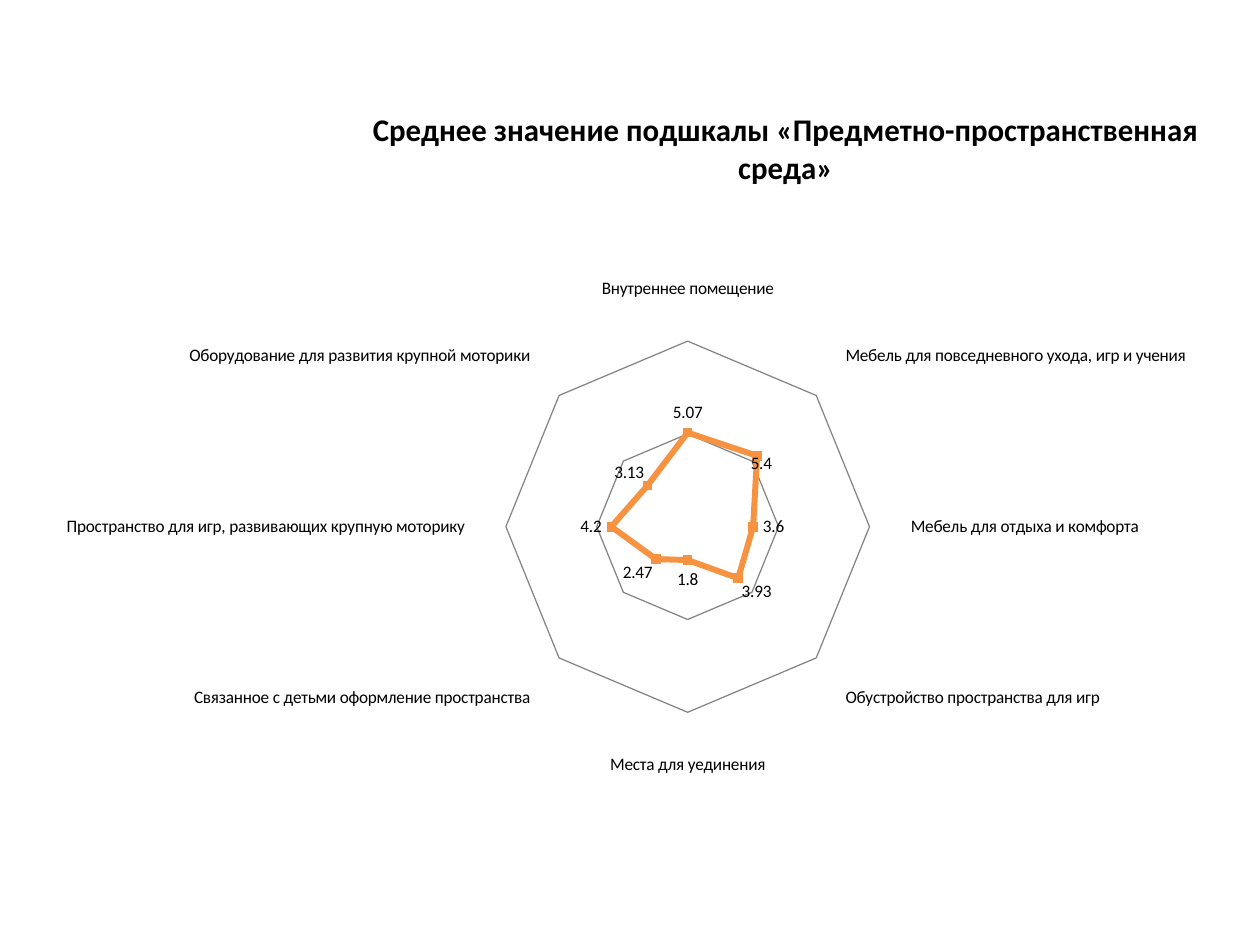
from lxml.etree import SubElement
from pptx import Presentation
from pptx.chart.data import CategoryChartData
from pptx.dml.color import RGBColor
from pptx.enum.chart import XL_CHART_TYPE as Kind, XL_LABEL_POSITION as LabelPos
from pptx.enum.chart import XL_MARKER_STYLE as Marker, XL_TICK_MARK as Tick
from pptx.oxml.ns import qn
from pptx.util import Emu, Pt

COLORS = {"text": "000000", "score": "F69240", "grid": "868686"}
FONT = "Calibri"
PX = 914400 / 126

TITLE = "Среднее значение подшкалы «Предметно-пространственная среда»"
SCORES = {
    "Внутреннее помещение": 5.07,
    "Мебель для повседневного ухода, игр и учения": 5.4,
    "Мебель для отдыха и комфорта": 3.6,
    "Обустройство пространства для игр": 3.93,
    "Места для уединения": 1.8,
    "Связанное с детьми оформление пространства": 2.47,
    "Пространство для игр, развивающих крупную моторику": 4.2,
    "Оборудование для развития крупной моторики": 3.13,
}
CHART_BOX = (44, 76, 1160, 784)


def px(length):
    return Emu(round(length * PX))


def color(name):
    return RGBColor.from_string(COLORS[name])


def set_values(target, values):
    for name, value in values.items():
        setattr(target, name, value)


def set_layout(parent, x, y, modes):
    """Place a chart part by px, written as fractions of the chart."""
    for old in parent.findall(qn("c:layout")):
        parent.remove(old)
    layout = SubElement(parent, qn("c:layout"))
    manual = SubElement(layout, qn("c:manualLayout"))
    width, height = CHART_BOX[2:]
    for tag, value in {**modes, "x": x / width, "y": y / height}.items():
        SubElement(manual, qn(f"c:{tag}")).set("val", str(value))
    parent.insert(1, layout)


class Deck:
    def __init__(self, width, height):
        self.prs = Presentation()
        set_values(self.prs, {"slide_width": px(width), "slide_height": px(height)})
        self.slide = self.prs.slides.add_slide(self.prs.slide_layouts[6])

    def style_font(self, font, size, bold=False):
        set_values(font, {"name": FONT, "size": Pt(size), "bold": bold})
        font.color.rgb = color("text")

    def style_line(self, line, name, width):
        line.color.rgb = color(name)
        line.width = Pt(width)

    def radar(self, scores, box):
        data = CategoryChartData()
        data.categories = list(scores)
        data.add_series("Series 1", list(scores.values()))
        frame = self.slide.shapes.add_chart(
            Kind.RADAR_MARKERS, *(px(side) for side in box), data)
        chart = frame.chart
        chart.has_legend = False
        self.style_font(chart.font, 10)
        self.style_axes(chart)
        self.style_series(chart.plots[0].series[0])
        return chart

    def style_axes(self, chart):
        set_values(chart.value_axis, {
            "minimum_scale": 0, "maximum_scale": 10, "major_unit": 5,
            "has_major_gridlines": True, "visible": False})
        self.style_line(chart.value_axis.major_gridlines.format.line, "grid", 0.75)
        set_values(chart.category_axis, {
            "major_tick_mark": Tick.NONE, "minor_tick_mark": Tick.NONE})
        chart.category_axis.format.line.fill.background()

    def style_series(self, series):
        series.smooth = False
        self.style_line(series.format.line, "score", 3.5)
        set_values(series.marker, {"style": Marker.SQUARE, "size": 5})
        series.marker.format.fill.solid()
        series.marker.format.fill.fore_color.rgb = color("score")
        series.marker.format.line.fill.background()
        set_values(series.data_labels, {
            "show_value": True, "position": LabelPos.OUTSIDE_END})
        self.style_font(series.data_labels.font, 10)

    def chart_title(self, chart, text, x, y):
        chart.has_title = True
        title = chart.chart_title
        title.include_in_layout = False
        title.text_frame.text = text
        self.style_font(title.text_frame.paragraphs[0].runs[0].font, 18, True)
        set_layout(chart.element.xpath(".//c:title")[0], x, y,
                   {"xMode": "edge", "yMode": "edge"})

    def shift_label(self, chart, point, x, y):
        label = chart.plots[0].series[0].points[point].data_label
        label.position = LabelPos.OUTSIDE_END
        self.style_font(label.font, 10)
        set_layout(chart.element.xpath(".//c:dLbl")[0], x, y, {})


def main():
    deck = Deck(1260, 945)

    # Radar of subscale scores
    radar = deck.radar(SCORES, CHART_BOX)
    deck.chart_title(radar, TITLE, 330, 26)

    # The second score sits below its default place
    deck.shift_label(radar, 1, -10, 21)

    deck.prs.save("out.pptx")


if __name__ == "__main__":
    main()
